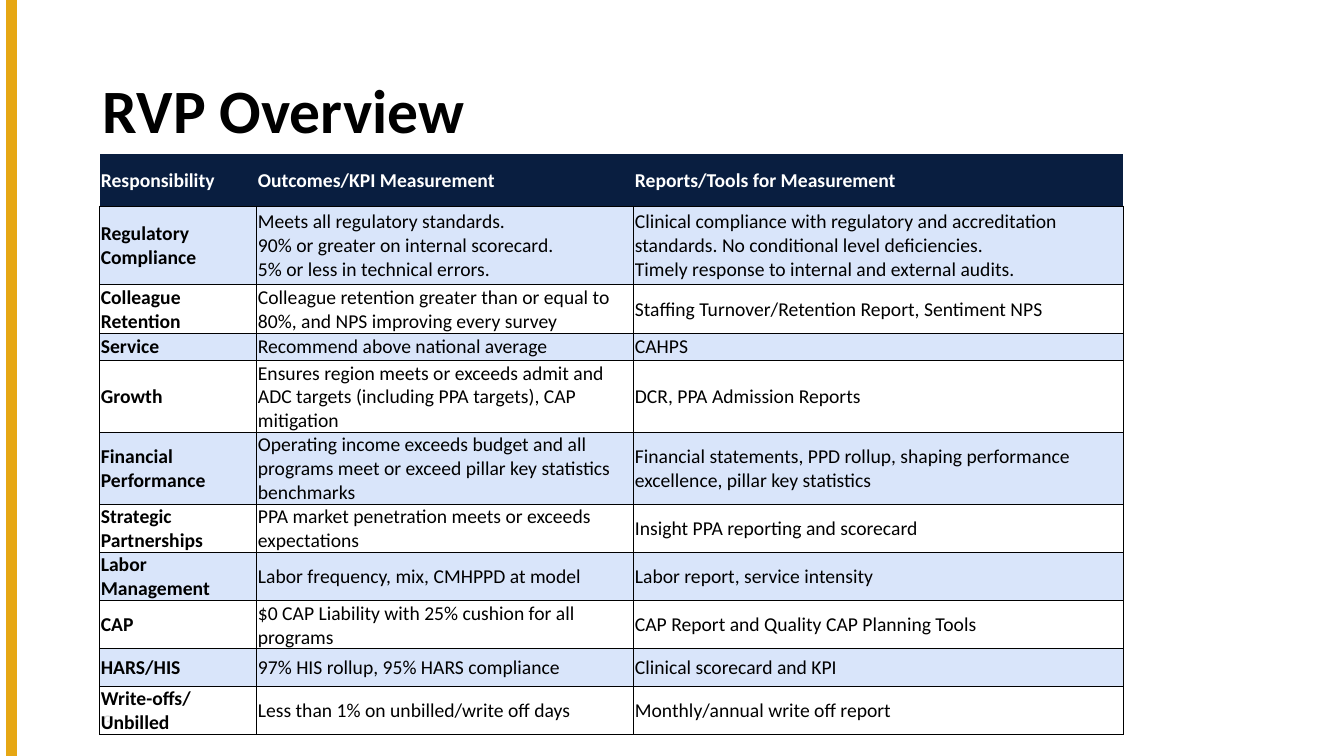
from lxml import etree
from pptx import Presentation
from pptx.dml.color import RGBColor
from pptx.enum import shapes, text
from pptx.oxml import ns
from pptx.util import Cm, Pt

FONT = "Calibri"
GOLD, NAVY, PALE_BLUE = "E6A714", "091E40", "D9E5FA"
BLACK, WHITE, LIGHT_GREY = "000000", "FFFFFF", "D9D9D9"

COLUMN_WIDTHS = [3.96, 9.5, 12.34]
ROW_HEIGHTS = [1.3, 1.98, 1.17, 0.69, 1.75, 1.45, 1.17, 0.91, 1.04, 0.94, 0.69]
RESPONSIBILITIES = [
    ("Responsibility", "Outcomes/KPI Measurement", "Reports/Tools for Measurement"),
    ("Regulatory \nCompliance",
     "Meets all regulatory standards.\n90% or greater on internal scorecard.\n"
     "5% or less in technical errors.",
     "Clinical compliance with regulatory and accreditation standards. "
     "No conditional level deficiencies.\n"
     "Timely response to internal and external audits."),
    ("Colleague \nRetention",
     "Colleague retention greater than or equal to 80%, and NPS improving every survey",
     "Staffing Turnover/Retention Report, Sentiment NPS"),
    ("Service", "Recommend above national average", "CAHPS"),
    ("Growth",
     "Ensures region meets or exceeds admit and ADC targets "
     "(including PPA targets), CAP mitigation",
     "DCR, PPA Admission Reports"),
    ("Financial \nPerformance",
     "Operating income exceeds budget and all programs meet or exceed "
     "pillar key statistics benchmarks",
     "Financial statements, PPD rollup, shaping performance excellence, "
     "pillar key statistics"),
    ("Strategic \nPartnerships",
     "PPA market penetration meets or exceeds expectations",
     "Insight PPA reporting and scorecard"),
    ("Labor Management", "Labor frequency, mix, CMHPPD at model",
     "Labor report, service intensity"),
    ("CAP", "$0 CAP Liability with 25% cushion for all programs",
     "CAP Report and Quality CAP Planning Tools"),
    ("HARS/HIS", "97% HIS rollup, 95% HARS compliance", "Clinical scorecard and KPI"),
    ("Write-offs/\nUnbilled", "Less than 1% on unbilled/write off days",
     "Monthly/annual write off report"),
]


def color(hex_string):
    return RGBColor.from_string(hex_string)


def format_text(frame, size, hex_string, bold=False):
    for paragraph in frame.paragraphs:
        for run in paragraph.runs:
            run.font.name = FONT
            run.font.size = Pt(size)
            run.font.bold = bold
            run.font.color.rgb = color(hex_string)


def add_side_stripe(slide, x, top, height):
    stripe = slide.shapes.add_connector(
        shapes.MSO_CONNECTOR.STRAIGHT, Cm(x), Cm(top), Cm(x), Cm(top + height))
    stripe.line.color.rgb = color(GOLD)
    stripe.line.width = Pt(8)
    etree.SubElement(stripe._element.spPr, ns.qn("a:effectLst"))


def add_label(slide, box, words, size, hex_string, bold=False):
    frame = slide.shapes.add_textbox(*map(Cm, box)).text_frame
    frame.word_wrap = True
    frame.vertical_anchor = text.MSO_ANCHOR.MIDDLE
    frame.text = words
    format_text(frame, size, hex_string, bold)
    return frame


def set_borders(cell, visible_sides):
    properties = cell._tc.get_or_add_tcPr()
    for side in "LRTB":
        border = etree.SubElement(properties, ns.qn(f"a:ln{side}"), w=str(Pt(0.5)))
        if side in visible_sides:
            fill = etree.SubElement(border, ns.qn("a:solidFill"))
            etree.SubElement(fill, ns.qn("a:srgbClr"), val=BLACK)
        else:
            etree.SubElement(border, ns.qn("a:noFill"))


def fill_cell(cell, words, row, column):
    is_header = row == 0
    set_borders(cell, "B" if is_header else "LRTB")
    # Header in navy, then every other row in pale blue
    if is_header or row % 2:
        cell.fill.solid()
        cell.fill.fore_color.rgb = color(NAVY if is_header else PALE_BLUE)
    else:
        cell.fill.background()
    cell.margin_left = cell.margin_right = cell.margin_top = Cm(0.03)
    cell.margin_bottom = 0
    cell.vertical_anchor = text.MSO_ANCHOR.MIDDLE
    cell.text_frame.text = words
    format_text(cell.text_frame, 14, WHITE if is_header else BLACK,
                bold=is_header or column == 0)


def add_responsibility_table(slide, left, top):
    table = slide.shapes.add_table(
        len(ROW_HEIGHTS), len(COLUMN_WIDTHS), Cm(left), Cm(top),
        Cm(sum(COLUMN_WIDTHS)), Cm(sum(ROW_HEIGHTS))).table
    table.first_row = table.horz_banding = False
    for column, width in zip(table.columns, COLUMN_WIDTHS):
        column.width = Cm(width)
    for row, height in zip(table.rows, ROW_HEIGHTS):
        row.height = Cm(height)
    for r, entries in enumerate(RESPONSIBILITIES):
        for c, words in enumerate(entries):
            fill_cell(table.cell(r, c), words, r, c)


def main():
    deck = Presentation()
    deck.slide_width, deck.slide_height = Cm(33.87), Cm(19.05)
    slide = deck.slides.add_slide(deck.slide_layouts[6])

    # Stripe, title and page number
    add_side_stripe(slide, 0.3, 0, 19.05)
    title = add_label(slide, (2.34, 1.02, 29.21, 3.68), "RVP Overview", 44, BLACK, bold=True)
    title.paragraphs[0].line_spacing = 0.9
    add_label(slide, (2.34, 17.65, 7.62, 1.02), "3", 14, LIGHT_GREY)

    # Responsibilities with their measures and reports
    add_responsibility_table(slide, 2.51, 3.89)
    deck.save("out.pptx")


if __name__ == "__main__":
    main()
